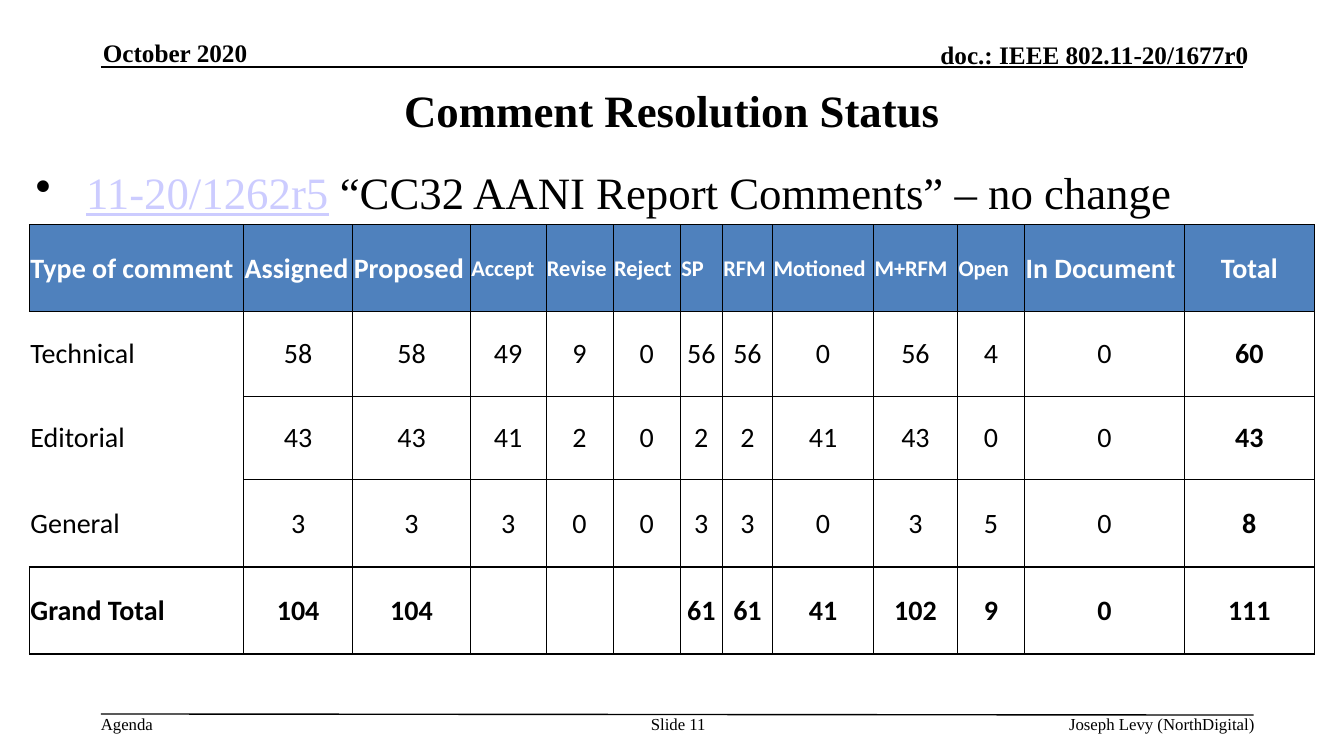
"""Build the comment resolution status slide."""
from dataclasses import dataclass
from typing import Optional

import lxml.etree
import pptx
import pptx.dml.color
import pptx.enum.shapes
import pptx.enum.text
import pptx.oxml.ns
import pptx.util

ALIGN = pptx.enum.text.PP_ALIGN
ANCHOR = pptx.enum.text.MSO_ANCHOR
EMU_PER_PX = 9525


@dataclass(frozen=True)
class Theme:
    black: str = "000000"
    white: str = "FFFFFF"
    header_fill: str = "4F81BD"
    link: str = "CCCCFF"
    serif: str = "Times New Roman"
    sans: str = "Calibri"
    large: int = 32
    table: int = 20
    narrow: int = 16
    header: int = 18
    footer: int = 12
    thin: float = 0.5
    thick: float = 1


THEME = Theme()


@dataclass(frozen=True)
class Run:
    text: str
    size: int
    bold: bool = False
    color: str = THEME.black
    underline: bool = False
    font: str = THEME.serif


@dataclass(frozen=True)
class Label:
    box: tuple[int, int, int, int]
    runs: tuple[Run, ...]
    align: ALIGN = ALIGN.LEFT
    anchor: ANCHOR = ANCHOR.TOP
    inset: tuple[int, int] = (0, 0)
    space_before: int = 0
    wrap: bool = True
    bullet_indent: Optional[int] = None


@dataclass(frozen=True)
class Rule:
    start: tuple[int, int]
    end: tuple[int, int]


@dataclass(frozen=True)
class Column:
    title: str
    width: int
    size: int = THEME.table


RULES = (Rule((96, 64), (1184, 64)), Rule((96, 680), (1194, 681)))

LABELS = (
    Label((98, 35, 262, 29), (Run("October 2020", THEME.header, True),), anchor=ANCHOR.BOTTOM),
    Label((700, 37, 489, 29), (Run("doc.: IEEE 802.11-20/1677r0", THEME.header, True),),
          ALIGN.RIGHT, ANCHOR.BOTTOM),
    Label((96, 72, 1088, 64), (Run("Comment Resolution Status", THEME.large, True),),
          ALIGN.CENTER, ANCHOR.MIDDLE, (10, 5), 2),
    Label((24, 152, 1224, 528),
          (Run("11-20/1262r5", THEME.large, color=THEME.link, underline=True),
           Run(" “CC32 AANI Report Comments” – no change", THEME.large)),
          inset=(10, 5), space_before=2, bullet_indent=48),
    Label((96, 680, 50, 19), (Run("Agenda", THEME.footer),), wrap=False),
    Label((609, 680, 74, 38), (Run("Slide 11", THEME.footer),), ALIGN.CENTER),
    Label((750, 680, 445, 19), (Run("Joseph Levy (NorthDigital)", THEME.footer),), ALIGN.RIGHT),
)

TABLE_ORIGIN = (28, 214)
ROW_HEIGHTS = (83, 80, 80, 83, 83)
ROW_EDGES = (THEME.thick, THEME.thick, THEME.thin, THEME.thin, THEME.thick, THEME.thick)
COLUMNS = (
    Column("Type of comment", 204),
    Column("Assigned", 104),
    Column("Proposed", 112),
    Column("Accept", 72, THEME.narrow),
    Column("Revise", 64, THEME.narrow),
    Column("Reject", 64, THEME.narrow),
    Column("SP", 40, THEME.narrow),
    Column("RFM", 48, THEME.narrow),
    Column("Motioned", 96, THEME.narrow),
    Column("M+RFM", 80, THEME.narrow),
    Column("Open", 64, THEME.narrow),
    Column("In Document", 152),
    Column("Total", 124),
)
COUNTS = (
    ("Technical", 58, 58, 49, 9, 0, 56, 56, 0, 56, 4, 0, 60),
    ("Editorial", 43, 43, 41, 2, 0, 2, 2, 41, 43, 0, 0, 43),
    ("General", 3, 3, 3, 0, 0, 3, 3, 0, 3, 5, 0, 8),
    ("Grand Total", 104, 104, "", "", "", 61, 61, 41, 102, 9, 0, 111),
)
LAST_ROW = len(COUNTS)
LAST_COLUMN = len(COLUMNS) - 1


def px(length: int) -> pptx.util.Emu:
    """Turn pixels into EMU."""
    return pptx.util.Emu(length * EMU_PER_PX)


def set_values(target: object, values: dict) -> None:
    """Set each named attribute on the target."""
    for name, value in values.items():
        setattr(target, name, value)


def rgb(color: str) -> pptx.dml.color.RGBColor:
    """Read a hexadecimal colour."""
    return pptx.dml.color.RGBColor.from_string(color)


def add_element(parent, tag: str, **attributes: str):
    """Append an XML child to the parent."""
    return lxml.etree.SubElement(parent, pptx.oxml.ns.qn(tag), attributes)


def add_run(paragraph, run: Run) -> None:
    """Append formatted text to a paragraph."""
    text_run = paragraph.add_run()
    text_run.text = run.text
    set_values(text_run.font, {"name": run.font, "size": pptx.util.Pt(run.size),
                               "bold": run.bold, "underline": run.underline})
    text_run.font.color.rgb = rgb(run.color)


def add_bullet(paragraph, indent: int) -> None:
    """Give a paragraph a hanging round bullet."""
    properties = paragraph._p.get_or_add_pPr()
    properties.set("marL", str(px(indent)))
    properties.set("indent", str(-px(indent)))
    add_element(add_element(properties, "a:buClr"), "a:srgbClr", val=THEME.black)
    add_element(properties, "a:buChar", char="•")


def add_label(slide, label: Label) -> None:
    """Draw a text box."""
    frame = slide.shapes.add_textbox(*map(px, label.box)).text_frame
    horizontal, vertical = map(px, label.inset)
    set_values(frame, {"word_wrap": label.wrap, "vertical_anchor": label.anchor,
                       "margin_left": horizontal, "margin_right": horizontal,
                       "margin_top": vertical, "margin_bottom": vertical})
    paragraph = frame.paragraphs[0]
    set_values(paragraph, {"alignment": label.align,
                           "space_before": pptx.util.Pt(label.space_before)})
    if label.bullet_indent is not None:
        add_bullet(paragraph, label.bullet_indent)
    for run in label.runs:
        add_run(paragraph, run)


def add_rule(slide, rule: Rule) -> None:
    """Draw a straight line."""
    connector = slide.shapes.add_connector(
        pptx.enum.shapes.MSO_CONNECTOR.STRAIGHT, *map(px, rule.start + rule.end))
    connector.line.color.rgb = rgb(THEME.black)
    connector.line.width = pptx.util.Pt(THEME.thick)
    add_element(connector._element.spPr, "a:effectLst")


def border_widths(row: int, column: int) -> dict[str, float]:
    """Work out the border widths of a table cell."""
    framed = row in (0, LAST_ROW)
    outer = THEME.thick if framed else THEME.thin
    top, bottom = ROW_EDGES[row:row + 2]
    if column == 0:
        top, bottom = (edge if edge == THEME.thick else 0 for edge in (top, bottom))
    left = THEME.thin if column else THEME.thick * framed
    right = outer if column == LAST_COLUMN else THEME.thin
    return {"a:lnL": left, "a:lnR": right, "a:lnT": top, "a:lnB": bottom}


def set_borders(cell, widths: dict[str, float]) -> None:
    """Apply border widths, hiding those of zero."""
    properties = cell._tc.get_or_add_tcPr()
    for index, (tag, width) in enumerate(widths.items()):
        border = lxml.etree.Element(pptx.oxml.ns.qn(tag), w=str(pptx.util.Pt(width)))
        if width:
            add_element(add_element(border, "a:solidFill"), "a:srgbClr", val=THEME.black)
        else:
            add_element(border, "a:noFill")
        properties.insert(index, border)


def fill_cell(cell, row: int, column: int, text: str) -> None:
    """Write and format a table cell."""
    heading = row == 0
    set_values(cell, {"margin_left": px(1), "margin_right": px(1), "margin_top": px(1),
                      "margin_bottom": 0, "vertical_anchor": ANCHOR.MIDDLE})
    if heading:
        cell.fill.solid()
        cell.fill.fore_color.rgb = rgb(THEME.header_fill)
    else:
        cell.fill.background()
    set_borders(cell, border_widths(row, column))
    if text:
        paragraph = cell.text_frame.paragraphs[0]
        centred = column == LAST_COLUMN or (column > 0 and not heading)
        paragraph.alignment = ALIGN.CENTER if centred else ALIGN.LEFT
        add_run(paragraph, Run(text, COLUMNS[column].size if heading else THEME.table,
                               row in (0, LAST_ROW) or column == LAST_COLUMN,
                               THEME.white if heading else THEME.black, font=THEME.sans))


def add_status_table(slide) -> None:
    """Draw the table of comment counts."""
    rows = (tuple(column.title for column in COLUMNS), *COUNTS)
    size = (sum(column.width for column in COLUMNS), sum(ROW_HEIGHTS))
    table = slide.shapes.add_table(
        len(rows), len(COLUMNS), *map(px, TABLE_ORIGIN + size)).table
    set_values(table, {"first_row": False, "horz_banding": False})
    for index, column in enumerate(COLUMNS):
        table.columns[index].width = px(column.width)
    for row, values in enumerate(rows):
        table.rows[row].height = px(ROW_HEIGHTS[row])
        for column, value in enumerate(values):
            fill_cell(table.cell(row, column), row, column, str(value))


def main() -> None:
    """Build and save the presentation."""
    presentation = pptx.Presentation()
    set_values(presentation, {"slide_width": px(1280), "slide_height": px(720)})
    slide = presentation.slides.add_slide(presentation.slide_layouts[6])
    for rule in RULES:
        add_rule(slide, rule)
    for label in LABELS:
        add_label(slide, label)
    add_status_table(slide)
    presentation.save("out.pptx")


if __name__ == "__main__":
    main()
